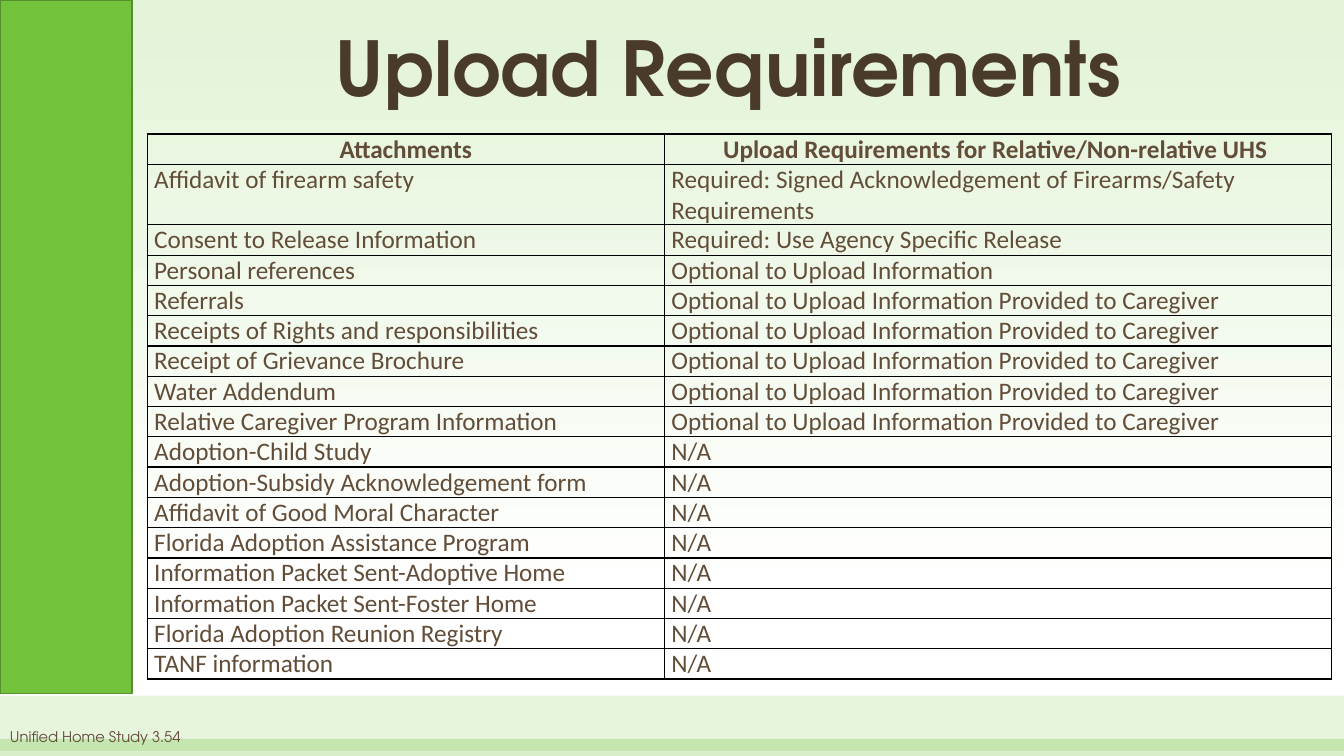
from lxml import etree
from pptx import Presentation
from pptx.dml.color import RGBColor
from pptx.enum.shapes import MSO_SHAPE
from pptx.enum.text import MSO_ANCHOR, PP_ALIGN
from pptx.oxml import parse_xml
from pptx.oxml.ns import nsdecls, qn
from pptx.util import Inches, Pt

RECT = MSO_SHAPE.RECTANGLE
LEFT, CENTER = PP_ALIGN.LEFT, PP_ALIGN.CENTER
TOP, BOTTOM = MSO_ANCHOR.TOP, MSO_ANCHOR.BOTTOM
GREEN = RGBColor(0x72, 0xC2, 0x3C)
EDGE = RGBColor(0x54, 0x90, 0x2C)
PALE = RGBColor(0xE3, 0xF3, 0xD8)
WHITE = RGBColor(0xFF, 0xFF, 0xFF)
DARK = RGBColor(0x4A, 0x3A, 0x2A)
BROWN = RGBColor(0x62, 0x4D, 0x38)
WIDE, HIGH = 13.33, 7.5
ROW = 0.3

TITLE = {"name": "TeX Gyre Adventor", "size": Pt(54), "bold": True}
NOTE = {"name": "TeX Gyre Adventor", "size": Pt(10.5), "bold": False}
HEAD = {"name": "Calibri", "size": Pt(18), "bold": True}
BODY = {**HEAD, "bold": False}
INSET = {"margin_left": Inches(0.07), "margin_right": Inches(0.07),
         "margin_top": 0, "margin_bottom": 0}

GIVEN = "Optional to Upload Information Provided to Caregiver"
NONE = "N/A"
ROWS = [
    ("Attachments", "Upload Requirements for Relative/Non-relative UHS "),
    ("Affidavit of firearm safety",
     "Required: Signed Acknowledgement of Firearms/Safety Requirements"),
    ("Consent to Release Information", "Required: Use Agency Specific Release"),
    ("Personal references", "Optional to Upload Information"),
    ("Referrals", GIVEN),
    ("Receipts of Rights and responsibilities", GIVEN),
    ("Receipt of Grievance Brochure", GIVEN),
    ("Water Addendum", GIVEN),
    ("Relative Caregiver Program Information", GIVEN),
    ("Adoption-Child Study", NONE),
    ("Adoption-Subsidy Acknowledgement form", NONE),
    ("Affidavit of Good Moral Character", NONE),
    ("Florida Adoption Assistance Program", NONE),
    ("Information Packet Sent-Adoptive Home", NONE),
    ("Information Packet Sent-Foster Home", NONE),
    ("Florida Adoption Reunion Registry", NONE),
    ("TANF information", NONE),
]


def write(frame, text, form, color, align):
    para = frame.paragraphs[0]
    para.alignment = align
    run = para.add_run()
    run.text = text
    for key, value in form.items():
        setattr(run.font, key, value)
    run.font.color.rgb = color
    return para


deck = Presentation()
deck.slide_width, deck.slide_height = Inches(WIDE), Inches(HIGH)
slide = deck.slides.add_slide(deck.slide_layouts[6])

back = slide.background.fill
back.gradient()
back.gradient_angle = 270
for stop, color, place in zip(back.gradient_stops, (PALE, WHITE), (0, 0.79)):
    stop.color.rgb = color
    stop.position = place

for top, width, height, alpha in (
    (6.9, WIDE, 0.55, 17),
    (7.33, WIDE, 0.17, 28),
    (0, 1.31, 6.88, 100),
):
    bar = slide.shapes.add_shape(RECT, 0, Inches(top), Inches(width), Inches(height))
    bar.shadow.inherit = False
    bar.fill.solid()
    bar.fill.fore_color.rgb = GREEN
    if alpha < 100:
        bar.line.fill.background()
        tint = bar.fill._xPr.find(qn("a:solidFill"))[0]
        etree.SubElement(tint, qn("a:alpha")).set("val", str(alpha * 1000))
    else:
        bar.line.color.rgb = EDGE
        bar.line.width = Pt(1)

for text, area, form, color, align, anchor, space in (
    ("Upload Requirements", (2.02, -0.02, 10.4, 1.19), TITLE, DARK, CENTER, BOTTOM, 0.9),
    ("Unified Home Study 3.54", (0, 7.17, 2.99, 0.33), NOTE, BROWN, LEFT, TOP, 1.0),
):
    box = slide.shapes.add_textbox(*map(Inches, area))
    box.text_frame.word_wrap = True
    box.text_frame.vertical_anchor = anchor
    write(box.text_frame, text, form, color, align).line_spacing = space

table = slide.shapes.add_table(
    len(ROWS), 2, Inches(1.46), Inches(1.33), Inches(11.75), Inches(ROW * (len(ROWS) + 1))
).table
table.first_row = table.horz_banding = False
for col, width in zip(table.columns, (5.13, 6.62)):
    col.width = Inches(width)

for r, pair in enumerate(ROWS):
    table.rows[r].height = Inches(ROW * (2 if r == 1 else 1))
    form, align = (BODY, LEFT) if r else (HEAD, CENTER)
    for c, text in enumerate(pair):
        cell = table.cell(r, c)
        for key, value in INSET.items():
            setattr(cell, key, value)
        write(cell.text_frame, text, form, BROWN, align)
        cell.fill.background()
        for i, side in enumerate("LRTB"):
            cell._tc.tcPr.insert(i, parse_xml(
                f'<a:ln{side} {nsdecls("a")} w="{Pt(1)}"><a:solidFill>'
                f'<a:srgbClr val="000000"/></a:solidFill></a:ln{side}>'))

deck.save("out.pptx")
